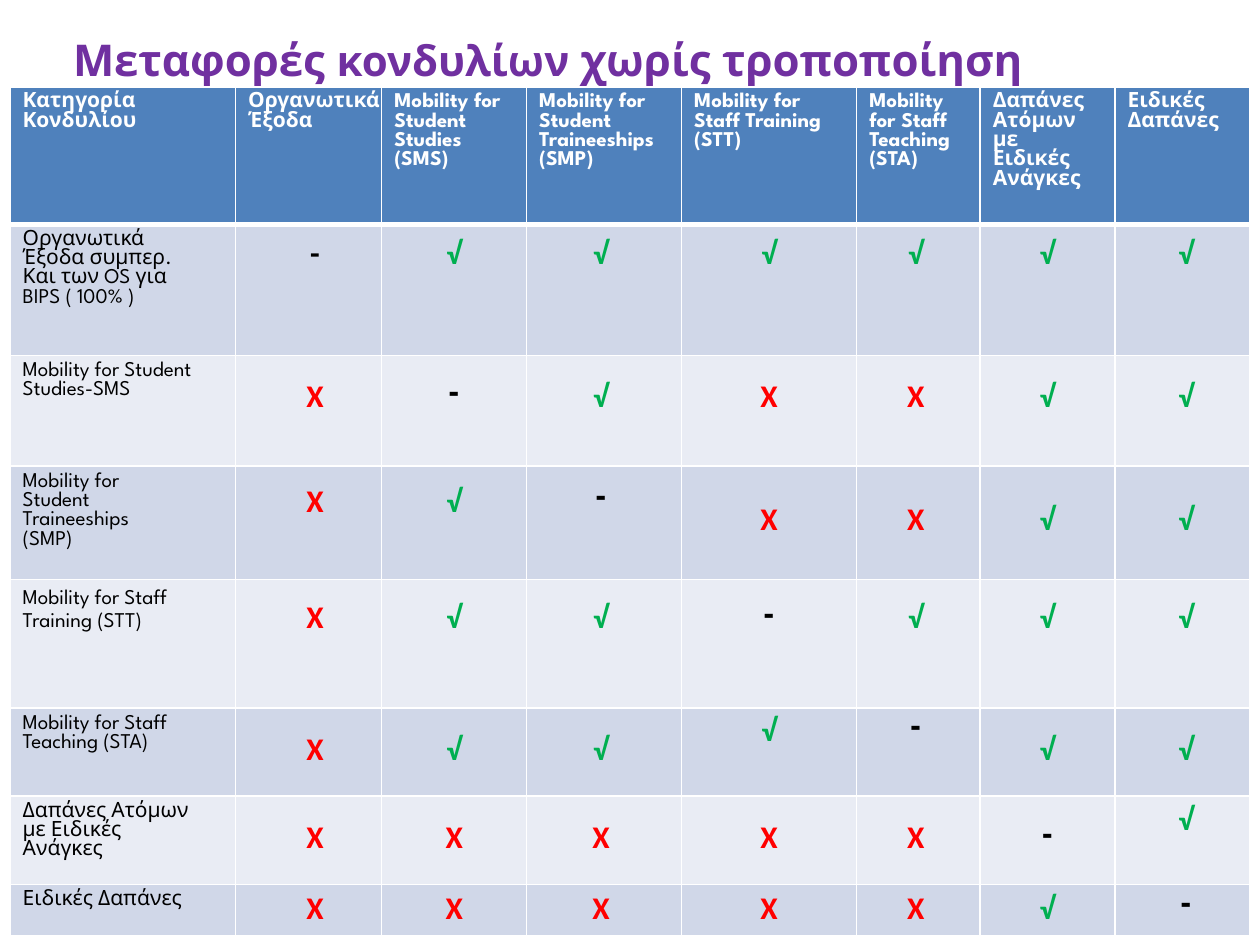
"""Build a slide with a table of budget transfers allowed without amendment."""
from dataclasses import dataclass, field

from lxml import etree
from pptx import Presentation, util as u
from pptx.dml.color import RGBColor
from pptx.enum import text
from pptx.oxml import ns

COLORS = {
    "title": "7030A0", "header": "4F81BC", "odd": "D0D7E8", "even": "E9ECF4",
    "white": "FFFFFF", "black": "000000", "yes": "00AF50", "no": "FF0000",
}
HEAD_FONT, MARK_FONT = "League Spartan", "Calibri"
MARK_COLORS = {"√": "yes", "Χ": "no", "-": "black"}
SLIDE_COLUMNS, SLIDE_ROWS = 1000, 750
GRID_UNIT = u.Inches(10) // SLIDE_COLUMNS
COLUMNS = [179, 116, 115, 123, 139, 98, 107, 107]
MARK_SHIFTS = {1: 10, 3: -5, 5: -4, 7: 6}
HEADER_HEIGHT = 109
LABEL_TOP, LABEL_LEFT, HEADER_RIGHT = 5, 10, 16


@dataclass
class Span:
    """A run of text with its look."""
    words: str
    size: float
    color: str
    font: str = HEAD_FONT
    bold: bool = True


@dataclass
class Category:
    """A table row: label, height, marks and the mark offsets from the top."""
    label: str
    height: int
    right: int
    marks: str
    top: int
    tops: dict[int, int] = field(default_factory=dict)
    dash_font: str = HEAD_FONT
    leading: float = 1.0


HEADERS = [
    ["Κατηγορία", "Κονδυλίου"],
    ["Οργανωτικά", "Έξοδα"],
    ["Mobility for Student Studies (SMS)"],
    ["Mobility for Student Traineeships (SMP)"],
    ["Mobility for Staff Training (STT)"],
    ["Mobility for Staff Teaching (STA)"],
    ["Δαπάνες Ατόμων με Ειδικές Ανάγκες"],
    ["Ειδικές", "Δαπάνες"],
]
CATEGORIES = [
    Category("Οργανωτικά Έξοδα συμπερ. Και των OS για BIPS ( 100% )", 104, 40,
             "-√√√√√√", 8, dash_font=MARK_FONT),
    Category("Mobility for Student Studies-SMS", 88, 25, "Χ-√ΧΧ√√", 18, {2: 19}),
    Category("Mobility for Student Traineeships (SMP)", 90, 65, "Χ√-ΧΧ√√", 27,
             {1: 13, 2: 13, 3: 14}),
    Category("Mobility for Staff Training (STT)", 102, 40, "Χ√√-√√√", 15, {4: 17},
             leading=1.2),
    Category("Mobility for Staff Teaching (STA)", 70, 40, "Χ√√√-√√", 18, {4: 3, 5: 4}),
    Category("Δαπάνες Ατόμων με Ειδικές Ανάγκες", 70, 25, "ΧΧΧΧΧ-√", 18, {6: 20, 7: 3}),
    Category("Ειδικές Δαπάνες", 41, 25, "ΧΧΧΧΧ√-", 4, {7: 5}),
]


def grid(count: float) -> int:
    """Return the length of a number of grid units."""
    return int(count * GRID_UNIT)


def paint(color: str) -> RGBColor:
    """Return the named colour."""
    return RGBColor.from_string(COLORS[color])


def add_span(para, span: Span) -> None:
    """Add one run to a paragraph."""
    run = para.add_run()
    run.text = span.words
    run.font.size = u.Pt(span.size)
    run.font.name = span.font
    run.font.bold = span.bold
    run.font.color.rgb = paint(span.color)


def add_border(cell, side: str, width: float) -> None:
    """Draw a white border on one side of a cell."""
    line = etree.SubElement(cell._tc.get_or_add_tcPr(), ns.qn(f"a:ln{side}"),
                            w=str(u.Pt(width)))
    fill = etree.SubElement(line, ns.qn("a:solidFill"))
    etree.SubElement(fill, ns.qn("a:srgbClr"), val=COLORS["white"])


def style_cell(cell, row: int, top: int, left: int = 0, right: int = 0) -> None:
    """Set the margins, borders and fill of a cell."""
    cell.margin_top, cell.margin_bottom = grid(top), 0
    cell.margin_left, cell.margin_right = grid(left), grid(right)
    for side in "LRTB":
        heavy = (row, side) in [(0, "B"), (1, "T")]
        add_border(cell, side, 3 if heavy else 1)
    cell.fill.solid()
    cell.fill.fore_color.rgb = paint("header" if row == 0 else "odd" if row % 2 else "even")


def fill_header(table) -> None:
    """Write the header row."""
    for column, lines in enumerate(HEADERS):
        cell = table.cell(0, column)
        right = HEADER_RIGHT if len(lines) == 1 else 0
        style_cell(cell, 0, LABEL_TOP, LABEL_LEFT, right)
        frame = cell.text_frame
        for index, line in enumerate(lines):
            para = frame.add_paragraph() if index else frame.paragraphs[0]
            add_span(para, Span(line, 12, "white"))


def fill_category(table, row: int, category: Category) -> None:
    """Write a label and its marks."""
    cell = table.cell(row, 0)
    style_cell(cell, row, LABEL_TOP, LABEL_LEFT, category.right)
    para = cell.text_frame.paragraphs[0]
    para.line_spacing = category.leading
    add_span(para, Span(category.label, 12, "black", bold=False))
    for column, mark in enumerate(category.marks, start=1):
        cell = table.cell(row, column)
        shift = MARK_SHIFTS.get(column, 0)
        top = category.tops.get(column, category.top)
        style_cell(cell, row, top, max(shift, 0), max(-shift, 0))
        para = cell.text_frame.paragraphs[0]
        para.alignment = text.PP_ALIGN.CENTER
        font = category.dash_font if mark == "-" else MARK_FONT
        add_span(para, Span(mark, 18, MARK_COLORS[mark], font))


def add_title(page) -> None:
    """Add the slide title."""
    box = page.shapes.add_textbox(grid(58), grid(25), grid(839), grid(44))
    frame = box.text_frame
    frame.word_wrap = True
    frame.margin_left = frame.margin_right = frame.margin_bottom = 0
    frame.margin_top = grid(1)
    para = frame.paragraphs[0]
    for words, size in [("Μεταφορές ", 25), ("κονδυλίων ", 24), ("χωρίς τροποποίηση", 25)]:
        add_span(para, Span(words, size, "title"))


def add_transfers(page) -> None:
    """Add the table of transfers."""
    heights = [HEADER_HEIGHT, *(category.height for category in CATEGORIES)]
    table = page.shapes.add_table(len(heights), len(COLUMNS), grid(8), grid(69),
                                  grid(sum(COLUMNS)), grid(sum(heights))).table
    table.horz_banding = False
    for column, width in zip(table.columns, COLUMNS):
        column.width = grid(width)
    for row, height in zip(table.rows, heights):
        row.height = grid(height)
    fill_header(table)
    for row, category in enumerate(CATEGORIES, start=1):
        fill_category(table, row, category)


def main() -> None:
    """Build and save the deck."""
    deck = Presentation()
    deck.slide_width, deck.slide_height = grid(SLIDE_COLUMNS), grid(SLIDE_ROWS)
    page = deck.slides.add_slide(deck.slide_layouts[6])
    add_title(page)
    add_transfers(page)
    deck.save("out.pptx")


if __name__ == "__main__":
    main()
